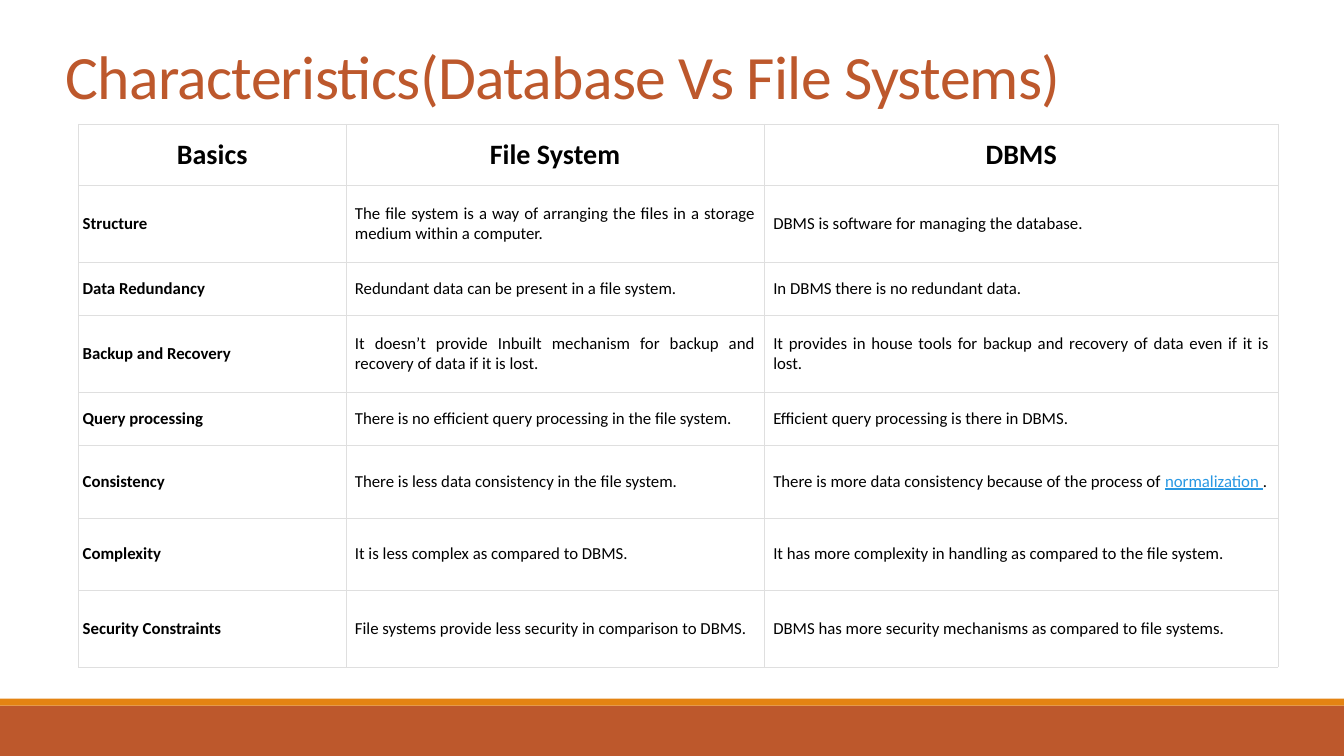
from pptx import Presentation
from pptx.dml.color import RGBColor
from pptx.enum.shapes import MSO_SHAPE as Shape
from pptx.enum.text import MSO_ANCHOR as Anchor, PP_ALIGN as Align
from pptx.oxml import parse_xml
from pptx.oxml.ns import nsdecls
from pptx.util import Inches, Pt

WIDTH, HEIGHT = Inches(13.33), Inches(7.5)
FONT = "Calibri"
RUST, ORANGE, BLUE = "BD582C", "E48312", "2998E3"
BLACK, WHITE, GREY = "000000", "FFFFFF", "DFDFDF"

# Column widths and row heights in percent of the slide
COLS = [19.88, 31.13, 38.25]
ROWS = [8.13, 10.13, 7.07, 10.13, 7.07, 9.6, 9.6, 10.13]

HEADS = ["Basics", "File System", "DBMS"]
# A cell is a text, or a list of (text, is link) parts
FACTS = [
    ["Structure",
     "The file system is a way of arranging the files in a storage medium within a computer.",
     "DBMS is software for managing the database."],
    ["Data Redundancy",
     "Redundant data can be present in a file system.",
     "In DBMS there is no redundant data."],
    ["Backup and Recovery",
     "It doesn’t provide Inbuilt mechanism for backup and recovery of data if it is lost.",
     "It provides in house tools for backup and recovery of data even if it is lost."],
    ["Query processing",
     "There is no efficient query processing in the file system.",
     "Efficient query processing is there in DBMS."],
    ["Consistency",
     "There is less data consistency in the file system.",
     [("There is more data consistency because of the process of ", False),
      ("normalization ", True), (".", False)]],
    ["Complexity",
     "It is less complex as compared to DBMS.",
     "It has more complexity in handling as compared to the file system."],
    ["Security Constraints",
     "File systems provide less security in comparison to DBMS.",
     "DBMS has more security mechanisms as compared to file systems."],
]


def color(code):
    return RGBColor.from_string(code)


def wide(share):
    return round(WIDTH * share / 100)


def tall(share):
    return round(HEIGHT * share / 100)


def add_run(para, text, size, tint=BLACK, bold=False, line=False):
    run = para.add_run()
    run.text = text
    font = run.font
    font.name, font.size, font.bold, font.underline = FONT, Pt(size), bold, line
    font.color.rgb = color(tint)
    return run


def add_band(slide, top, high, tint):
    band = slide.shapes.add_shape(Shape.RECTANGLE, 0, tall(top), WIDTH, tall(high))
    band.shadow.inherit = False
    band.fill.solid()
    band.fill.fore_color.rgb = color(tint)
    band.line.fill.background()


def add_title(slide, text):
    box = slide.shapes.add_textbox(wide(3.15), tall(4.13), wide(88.37), tall(11.33))
    frame = box.text_frame
    frame.word_wrap = True
    frame.vertical_anchor = Anchor.BOTTOM
    para = frame.paragraphs[0]
    para.line_spacing = 0.85
    run = add_run(para, text, 44, RUST)
    run.font._element.set("spc", "-50")


def add_edges(cell):
    # Borders must stand before the fill in the cell properties
    props = cell._tc.get_or_add_tcPr()
    for spot, side in enumerate("LRTB"):
        props.insert(spot, parse_xml(
            f'<a:ln{side} {nsdecls("a")} w="2921"><a:solidFill>'
            f'<a:srgbClr val="{GREY}"/></a:solidFill></a:ln{side}>'))


def fill_cell(cell, parts, head, first):
    cell.fill.solid()
    cell.fill.fore_color.rgb = color(WHITE)
    add_edges(cell)
    cell.vertical_anchor = Anchor.MIDDLE
    cell.margin_left = cell.margin_right = Inches(0.04 if first else 0.09)
    cell.margin_top = cell.margin_bottom = Inches(
        0.09 if head else 0.06 if first else 0.13)
    para = cell.text_frame.paragraphs[0]
    para.alignment = Align.CENTER if head else Align.JUSTIFY
    if isinstance(parts, str):
        parts = [(parts, False)]
    for text, link in parts:
        add_run(para, text, 20 if head else 12, BLUE if link else BLACK,
                head or first, link)


def add_grid(slide, rows):
    frame = slide.shapes.add_table(len(ROWS), len(COLS), wide(5.85), tall(16.4),
                                   wide(sum(COLS)), tall(sum(ROWS)))
    table = frame.table
    table.horz_banding = False
    for col, share in zip(table.columns, COLS):
        col.width = wide(share)
    for row, share in zip(table.rows, ROWS):
        row.height = tall(share)
    for r, row in enumerate(rows):
        for c, parts in enumerate(row):
            fill_cell(table.cell(r, c), parts, r == 0, c == 0)


def main():
    deck = Presentation()
    deck.slide_width, deck.slide_height = WIDTH, HEIGHT
    slide = deck.slides.add_slide(deck.slide_layouts[6])
    # Footer bands
    add_band(slide, 93.33, 6.67, RUST)
    add_band(slide, 92.4, 0.93, ORANGE)
    # Title and comparison table
    add_title(slide, " Characteristics(Database Vs File Systems)")
    add_grid(slide, [HEADS] + FACTS)
    deck.save("out.pptx")


if __name__ == "__main__":
    main()
